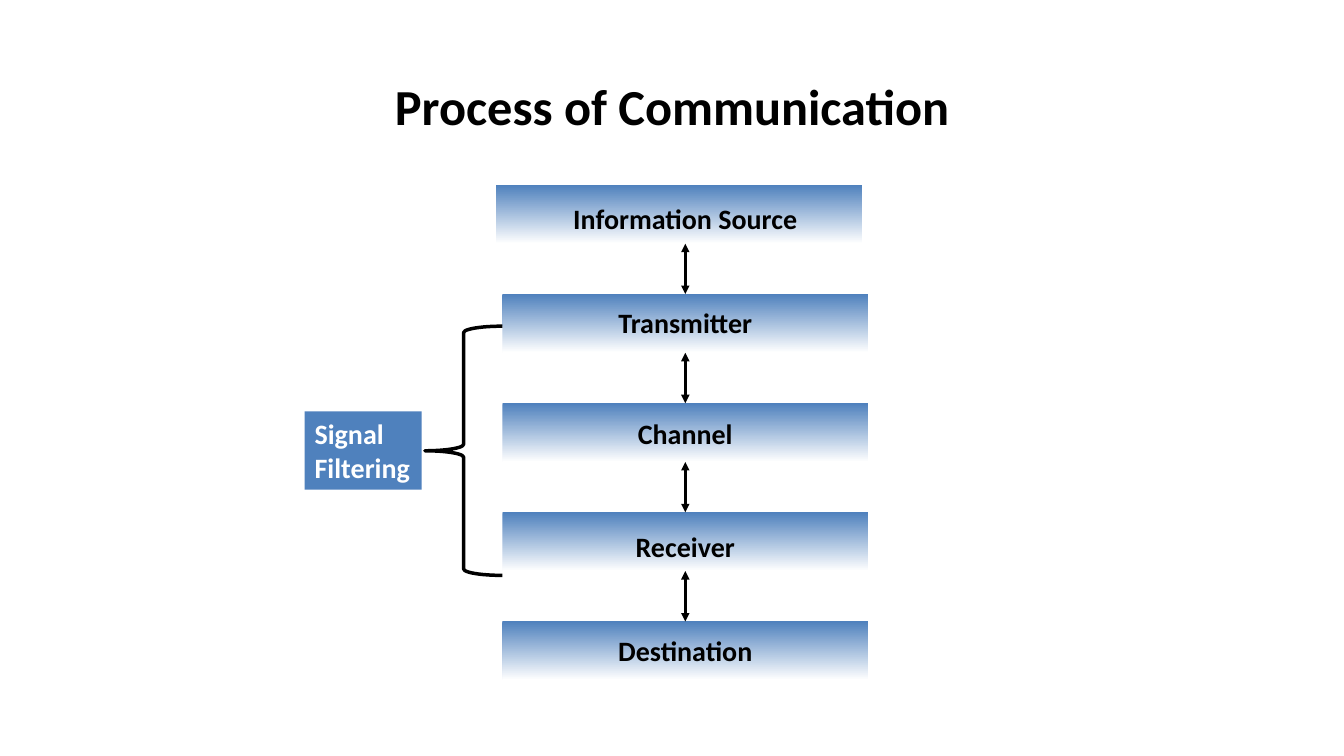
from lxml.etree import SubElement
from pptx import Presentation
from pptx.dml.color import RGBColor
from pptx.enum.shapes import MSO_CONNECTOR, MSO_SHAPE
from pptx.enum.text import MSO_ANCHOR, PP_ALIGN
from pptx.oxml.ns import qn
from pptx.util import Cm, Pt

COLORS = {"blue": "4F81BD", "white": "FFFFFF", "black": "000000"}
FONT = "Calibri"

STAGE_LEFT, STAGE_TOP = 12.66, 4.66
STAGE_WIDTH, STAGE_HEIGHT = 9.22, 1.48
STAGE_PITCH = 2.75
SOURCE_SHIFT = 0.16  # the first stage sits slightly left of the others
TOP, BOTTOM = 0, 2

# label and its distance from the top of the box, in cm
STAGES = [
    ("Information Source", 0.41),
    ("Transmitter", 0.28),
    ("Channel", 0.33),
    ("Receiver", 0.43),
    ("Destination", 0.31),
]


def color(name):
    return RGBColor.from_string(COLORS[name])


def write_text(frame, text, size=20, font_color="black", align=PP_ALIGN.CENTER,
               anchor=MSO_ANCHOR.MIDDLE, wrap=True):
    frame.text = text
    frame.word_wrap = wrap
    frame.vertical_anchor = anchor
    for paragraph in frame.paragraphs:
        paragraph.alignment = align
        font = paragraph.font
        font.name, font.size, font.bold = FONT, Pt(size), True
        font.color.rgb = color(font_color)


def add_box(slide, preset, left, top, width, height, fill):
    shape = slide.shapes.add_shape(preset, Cm(left), Cm(top), Cm(width), Cm(height))
    shape.shadow.inherit = False
    shape.fill.solid()
    shape.fill.fore_color.rgb = color(fill)
    shape.line.fill.background()
    return shape


def add_stage(slide, left, top, label, label_offset):
    """Add a box that fades to white, with its label."""
    box = add_box(slide, MSO_SHAPE.RECTANGLE, left, top, STAGE_WIDTH, STAGE_HEIGHT, "blue")
    box.fill.gradient()
    box.fill.gradient_angle = 270
    for stop, position, name in zip(box.fill.gradient_stops, (0, 1), ("blue", "white")):
        stop.position = position
        stop.color.rgb = color(name)
    write_text(box.text_frame, label, anchor=MSO_ANCHOR.TOP)
    box.text_frame.margin_top = Cm(label_offset)
    # keeps every label centred on the arrows
    box.text_frame.margin_left = Cm(0.25 + 2 * (STAGE_LEFT - left))
    return box


def add_double_arrow(slide, upper, lower):
    center = lower.left + lower.width // 2
    arrow = slide.shapes.add_connector(
        MSO_CONNECTOR.STRAIGHT, center, upper.top + upper.height, center, lower.top)
    if upper.left == lower.left:
        arrow.begin_connect(upper, BOTTOM)
    arrow.end_connect(lower, TOP)
    arrow.line.color.rgb = color("black")
    arrow.line.width = Pt(2)
    properties = arrow._element.spPr
    for end in ("a:headEnd", "a:tailEnd"):
        SubElement(properties.find(qn("a:ln")), qn(end), type="triangle")
    SubElement(properties, qn("a:effectLst"))


def add_title(slide, text):
    title = slide.shapes.title
    title.left, title.top, title.width, title.height = Cm(6.15), Cm(1.07), Cm(21.59), Cm(3.17)
    write_text(title.text_frame, text, size=36)


def add_signal_filtering(slide):
    box = add_box(slide, MSO_SHAPE.RECTANGLE, 7.68, 10.37, 2.95, 1.97, "blue")
    write_text(box.text_frame, "Signal\nFiltering", font_color="white",
               align=PP_ALIGN.LEFT, anchor=MSO_ANCHOR.TOP, wrap=False)
    brace = add_box(slide, MSO_SHAPE.LEFT_BRACE, 10.71, 8.22, 1.95, 6.28, "white")
    brace.line.color.rgb = color("black")
    brace.line.width = Pt(2.5)


def main():
    presentation = Presentation()
    presentation.slide_width, presentation.slide_height = Cm(33.87), Cm(19.05)
    slide = presentation.slides.add_slide(presentation.slide_layouts[5])

    add_title(slide, "Process of Communication")
    boxes = []
    for index, (label, label_offset) in enumerate(STAGES):
        left = STAGE_LEFT if index else STAGE_LEFT - SOURCE_SHIFT
        top = STAGE_TOP + index * STAGE_PITCH
        boxes.append(add_stage(slide, left, top, label, label_offset))
    for upper, lower in zip(boxes, boxes[1:]):
        add_double_arrow(slide, upper, lower)
    add_signal_filtering(slide)

    presentation.save("out.pptx")


if __name__ == "__main__":
    main()
